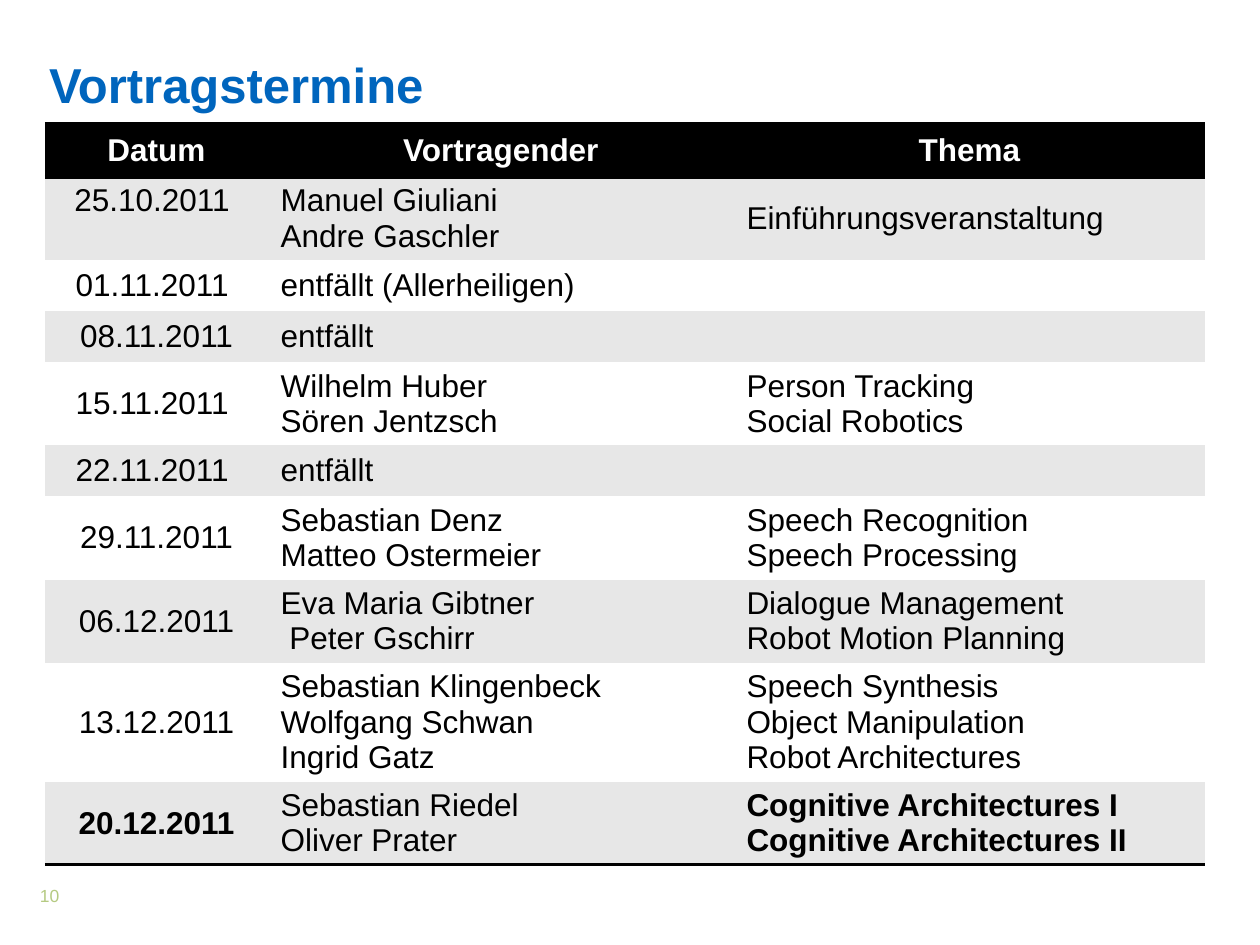
from lxml import etree
from pptx import Presentation
from pptx.dml.color import RGBColor
from pptx.enum.text import MSO_ANCHOR, PP_ALIGN
from pptx.oxml.ns import qn
from pptx.util import Emu, Pt

PX_PER_INCH = 126
TOP, MIDDLE = MSO_ANCHOR.TOP, MSO_ANCHOR.MIDDLE
LEFT, CENTER = PP_ALIGN.LEFT, PP_ALIGN.CENTER
TITLE_ONLY = 5
NO_STYLE = "{2D5ABB26-0587-4C30-8999-92F81FD0307C}"
BLACK, WHITE, BAND = "000000", "FFFFFF", "E7E7E7"

HEADER = ("Datum", "Vortragender", "Thema")
# "\v" breaks a line, "\n" starts a new paragraph
TALKS = [
    ("25.10.2011 ", "Manuel Giuliani\vAndre Gaschler", "Einführungsveranstaltung"),
    ("01.11.2011 ", "entfällt (Allerheiligen)", None),
    ("08.11.2011", "entfällt", None),
    ("15.11.2011 ", "Wilhelm Huber \vSören Jentzsch", "Person Tracking\vSocial Robotics"),
    ("22.11.2011 ", "entfällt", None),
    ("29.11.2011", "Sebastian Denz\vMatteo Ostermeier",
     "Speech Recognition\vSpeech Processing"),
    ("06.12.2011", "Eva Maria Gibtner\v Peter Gschirr",
     "Dialogue Management\nRobot Motion Planning"),
    ("13.12.2011", "Sebastian Klingenbeck\nWolfgang Schwan\nIngrid Gatz",
     "Speech Synthesis\nObject Manipulation\nRobot Architectures"),
    ("20.12.2011", "Sebastian Riedel\nOliver Prater",
     "Cognitive Architectures I\nCognitive Architectures II"),
]
COLUMN_WIDTHS = (223, 466, 471)
HEADER_HEIGHT = 53
ROW_HEIGHTS = {1: 51, 2: 83, 3: 119}  # by number of text lines


def px(length):
    return Emu(round(length * 914400 / PX_PER_INCH))


def rgb(value):
    return RGBColor.from_string(value)


def format_text(frame, size, color, bold=False, align=LEFT):
    for paragraph in frame.paragraphs:
        paragraph.alignment = align
        for run in paragraph.runs:
            run.font.name = "Arial"
            run.font.size = Pt(size)
            run.font.bold = bold
            run.font.color.rgb = rgb(color)


def place(shape, left, top, width, height):
    shape.left, shape.top = px(left), px(top)
    shape.width, shape.height = px(width), px(height)


def add_rules(cell, sides):
    """Draw black 2 pt borders on the given sides, in schema order."""
    properties = cell._tc.get_or_add_tcPr()
    for index, side in enumerate(sides):
        line = etree.Element(qn(f"a:ln{side}"), w=str(Pt(2)))
        fill = etree.SubElement(line, qn("a:solidFill"))
        etree.SubElement(fill, qn("a:srgbClr"), val=BLACK)
        properties.insert(index, line)


def fill_cell(cell, text, fill, color, bold, align):
    cell.text = text
    cell.vertical_anchor = MIDDLE
    cell.fill.solid()
    cell.fill.fore_color.rgb = rgb(fill)
    format_text(cell.text_frame, 18, color, bold, align)


def add_title(slide, left, top, width, height):
    title = slide.shapes.title
    place(title, left, top, width, height)
    frame = title.text_frame
    frame.text = "Vortragstermine"
    frame.margin_left = frame.margin_right = 0
    frame.margin_top = frame.margin_bottom = 0
    frame.vertical_anchor = TOP
    frame.paragraphs[0].line_spacing = 1.1
    format_text(frame, 28, "0065BD", bold=True)


def add_schedule(slide, left, top):
    line_counts = [len(speakers.splitlines()) for _, speakers, _ in TALKS]
    heights = [HEADER_HEIGHT] + [ROW_HEIGHTS[count] for count in line_counts]
    frame = slide.shapes.add_table(
        len(heights), len(HEADER), px(left), px(top),
        px(sum(COLUMN_WIDTHS)), px(sum(heights)))
    schedule = frame.table
    schedule.horz_banding = False
    schedule._tbl.tblPr.find(qn("a:tableStyleId")).text = NO_STYLE
    for column, width in zip(schedule.columns, COLUMN_WIDTHS):
        column.width = px(width)
    for row, height in zip(schedule.rows, heights):
        row.height = px(height)

    for column, heading in enumerate(HEADER):
        cell = schedule.cell(0, column)
        fill_cell(cell, heading, BLACK, WHITE, True, CENTER)
        add_rules(cell, "TB")

    last = len(TALKS)
    for row, talk in enumerate(TALKS, start=1):
        fill = BAND if row % 2 else WHITE
        for column, text in enumerate(talk):
            bold = row == last and column != 1
            align = LEFT if column else CENTER
            cell = schedule.cell(row, column)
            fill_cell(cell, text or "", fill, BLACK, bold, align)
            if row == last:
                add_rules(cell, "B")
        if talk[2] is None:
            schedule.cell(row, 1).merge(schedule.cell(row, 2))
    schedule.cell(1, 0).vertical_anchor = TOP


def add_page_number(slide, left, top, width, height):
    box = slide.shapes.add_textbox(px(left), px(top), px(width), px(height))
    frame = box.text_frame
    frame.word_wrap = True
    frame.margin_left = px(40)
    frame.vertical_anchor = MIDDLE
    frame.text = "10"
    format_text(frame, 10, "B5CA82")


def main():
    presentation = Presentation()
    presentation.slide_width, presentation.slide_height = px(1260), px(945)
    slide = presentation.slides.add_slide(presentation.slide_layouts[TITLE_ONLY])
    add_title(slide, 49, 49, 1160, 123)
    add_schedule(slide, 45, 124)
    add_page_number(slide, 0, 846, 100, 99)
    presentation.save("out.pptx")


if __name__ == "__main__":
    main()
